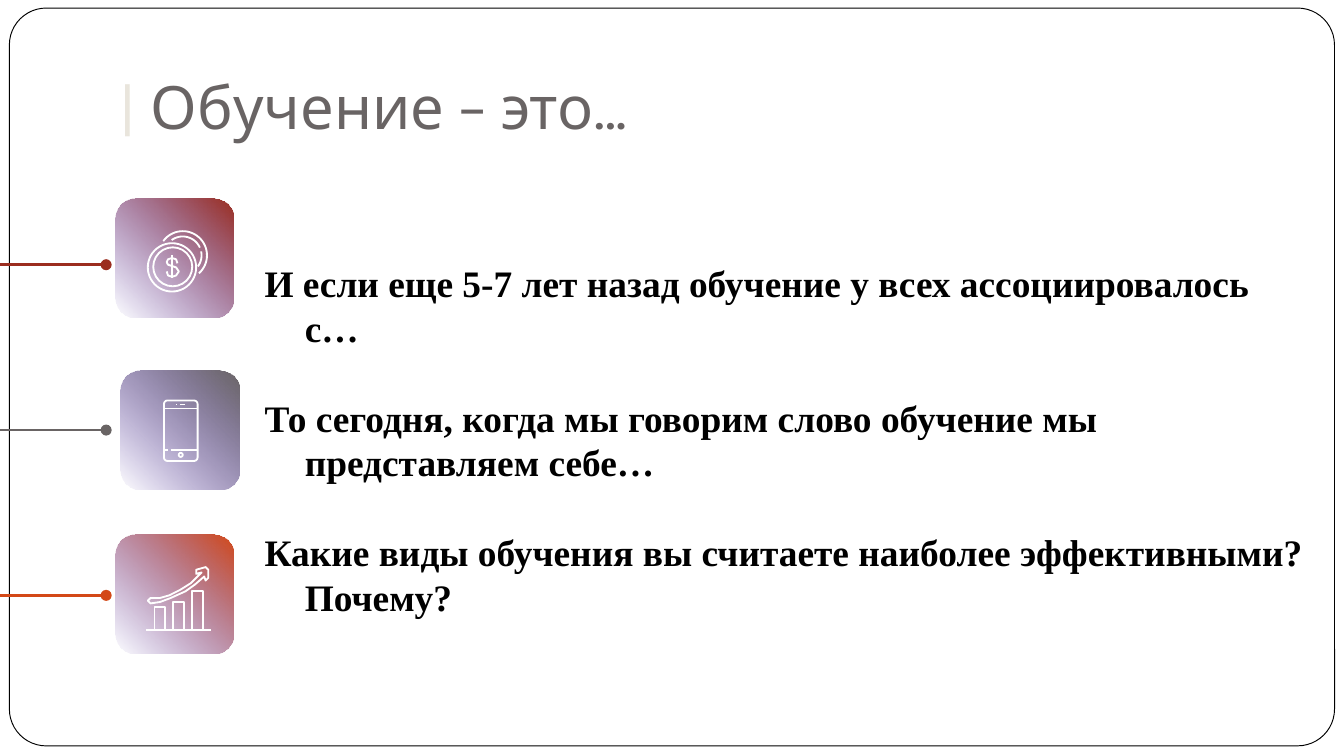
from dataclasses import dataclass
from math import cos, radians, sin

from pptx import Presentation
from pptx.dml.color import RGBColor
from pptx.enum.shapes import MSO_CONNECTOR, MSO_SHAPE
from pptx.enum.text import MSO_ANCHOR, MSO_AUTO_SIZE, PP_ALIGN
from pptx.oxml.ns import qn
from pptx.oxml.xmlchemy import OxmlElement
from pptx.util import Inches, Pt

STRAIGHT = MSO_CONNECTOR.STRAIGHT
ROUNDED, OVAL = MSO_SHAPE.ROUNDED_RECTANGLE, MSO_SHAPE.OVAL
TOP, MIDDLE = MSO_ANCHOR.TOP, MSO_ANCHOR.MIDDLE
LEFT = PP_ALIGN.LEFT
NO_AUTO_SIZE = MSO_AUTO_SIZE.NONE


@dataclass(frozen=True)
class Theme:
    title_font: str = "Karla"
    body_font: str = "Times New Roman"
    title_size: Pt = Pt(32)
    body_size: Pt = Pt(20)
    line_spacing: Pt = Pt(24)
    black: RGBColor = RGBColor.from_string("000000")
    white: RGBColor = RGBColor.from_string("FFFFFF")
    beige: RGBColor = RGBColor.from_string("E9E5DC")
    gray: RGBColor = RGBColor.from_string("696464")
    red: RGBColor = RGBColor.from_string("9B2D1F")
    orange: RGBColor = RGBColor.from_string("D34817")
    violet: RGBColor = RGBColor.from_string("270190")


THEME = Theme()
SLIDE_WIDTH = Inches(10)
SLIDE_HEIGHT = SLIDE_WIDTH * 9 // 16
TITLE = [("| ", THEME.beige), ("Обучение – это…", THEME.gray)]
STATEMENTS = [
    "И если еще 5-7 лет назад обучение у всех ассоциировалось с…",
    "То сегодня, когда мы говорим слово обучение мы представляем себе…",
    "Какие виды обучения вы считаете наиболее эффективными? Почему?",
]
TILES = [(0.86, 1.48, THEME.red), (0.9, 2.76, THEME.gray), (0.86, 3.98, THEME.orange)]
TILE_SIZE = 0.88
MARKER_TOP, MARKER_STEP = 1.97, 1.23
DOLLAR = [
    (1.32, 1.96), (1.31, 1.93), (1.28, 1.92), (1.25, 1.93), (1.24, 1.95), (1.25, 1.97),
    (1.28, 1.98), (1.31, 1.99), (1.33, 2.02), (1.31, 2.05), (1.28, 2.06), (1.25, 2.05),
    (1.24, 2.02),
]
GROWTH_ARROW = [
    (1.12, 4.45), (1.19, 4.45), (1.26, 4.43), (1.34, 4.39), (1.42, 4.34), (1.5, 4.26),
    (1.46, 4.27), (1.46, 4.24), (1.53, 4.22), (1.55, 4.24), (1.55, 4.3), (1.53, 4.32),
    (1.52, 4.29), (1.45, 4.35), (1.38, 4.4), (1.27, 4.45), (1.19, 4.48), (1.12, 4.49),
    (1.1, 4.47),
]


def set_formats(target, formats):
    for name, value in formats.items():
        setattr(target, name, value)


def style_outline(shape, color, width):
    shape.shadow.inherit = False
    shape.fill.background()
    shape.line.color.rgb = color
    shape.line.width = Pt(width)


def add_outline(shapes, kind, box, color=THEME.white, width=1, corner=None):
    shape = shapes.add_shape(kind, *map(Inches, box))
    style_outline(shape, color, width)
    if corner is not None:
        shape.adjustments[0] = corner


def add_path(shapes, points, close=False):
    start, *rest = [(Inches(x), Inches(y)) for x, y in points]
    builder = shapes.build_freeform(*start)
    builder.add_line_segments(rest, close=close)
    style_outline(builder.convert_to_shape(), THEME.white, 1)


def add_line(shapes, start, end, color, width):
    connector = shapes.add_connector(STRAIGHT, *map(Inches, (*start, *end)))
    connector.line.color.rgb = color
    connector.line.width = Pt(width)
    connector.element.spPr.append(OxmlElement("a:effectLst"))
    return connector


def add_marker(shapes, y, color):
    connector = add_line(shapes, (-0.8, y), (0.79, y), color, 1.5)
    line = connector.element.spPr.find(qn("a:ln"))
    for end in ("a:headEnd", "a:tailEnd"):
        ending = OxmlElement(end)
        ending.set("type", "oval")
        line.append(ending)


def add_tile(shapes, x, y, color):
    tile = shapes.add_shape(ROUNDED, *map(Inches, (x, y, TILE_SIZE, TILE_SIZE)))
    tile.shadow.inherit = False
    tile.line.fill.background()
    tile.fill.gradient()
    tile.fill.gradient_angle = 225
    stops = tile.fill.gradient_stops
    for stop, position, stop_color in zip(stops, (0, 1), (color, THEME.violet)):
        stop.position = position
        stop.color.rgb = stop_color
    alpha = OxmlElement("a:alpha")
    alpha.set("val", "0")
    list(tile.element.spPr.iter(qn("a:srgbClr")))[-1].append(alpha)


def arc_points(center, radius, first, last):
    angles = [radians(angle) for angle in range(first, last + 1, 6)]
    return [(center[0] + radius * cos(a), center[1] + radius * sin(a)) for a in angles]


def add_coins(slide):
    shapes = slide.shapes.add_group_shape().shapes
    add_outline(shapes, OVAL, (1.1, 1.81, 0.36, 0.36))
    add_outline(shapes, OVAL, (1.14, 1.84, 0.29, 0.29))
    for radius, first, last in ((0.18, 216, 408), (0.14, 234, 336), (0.14, 348, 396)):
        add_path(shapes, arc_points((1.36, 1.9), radius, first, last))
    add_path(shapes, DOLLAR)
    add_line(shapes, (1.28, 1.9), (1.28, 2.07), THEME.white, 1)


def add_phone(slide):
    shapes = slide.shapes.add_group_shape().shapes
    add_outline(shapes, ROUNDED, (1.22, 2.98, 0.25, 0.45), corner=0.1)
    add_outline(shapes, OVAL, (1.33, 3.37, 0.03, 0.03))
    for left, right, y in (
        (1.22, 1.47, 3.04), (1.27, 1.47, 3.35), (1.22, 1.25, 3.35),
        (1.34, 1.38, 3.01), (1.31, 1.32, 3.01),
    ):
        add_line(shapes, (left, y), (right, y), THEME.white, 1)


def add_growth_chart(slide):
    shapes = slide.shapes.add_group_shape().shapes
    base = 4.69
    add_line(shapes, (1.09, base), (1.57, base), THEME.white, 1)
    for index, top in enumerate((4.52, 4.48, 4.4)):
        left = 1.15 + 0.14 * index
        right = left + 0.08
        add_path(shapes, [(left, base), (left, top), (right, top), (right, base)])
    add_path(shapes, GROWTH_ARROW, close=True)


def format_frame(frame, anchor):
    inset = Inches(0.1)
    set_formats(frame, {
        "word_wrap": True, "auto_size": NO_AUTO_SIZE, "vertical_anchor": anchor,
        "margin_left": inset, "margin_right": inset,
        "margin_top": inset, "margin_bottom": inset,
    })


def add_run(paragraph, text, color, formats):
    run = paragraph.add_run()
    run.text = text
    run.font.color.rgb = color
    set_formats(run.font, formats)


def add_title(slide):
    title = slide.shapes.title
    set_formats(title, {
        "left": Inches(0.79), "top": Inches(0.42),
        "width": Inches(8.04), "height": Inches(0.65),
    })
    format_frame(title.text_frame, TOP)
    paragraph = title.text_frame.paragraphs[0]
    paragraph.alignment = LEFT
    for text, color in TITLE:
        add_run(paragraph, text, color, {"name": THEME.title_font, "size": THEME.title_size})


def add_statements(slide):
    box = slide.shapes.add_textbox(*map(Inches, (1.87, 1.33, 7.97, 3.88)))
    frame = box.text_frame
    format_frame(frame, MIDDLE)
    for index, text in enumerate(STATEMENTS):
        paragraph = frame.add_paragraph() if index else frame.paragraphs[0]
        set_formats(paragraph, {
            "alignment": LEFT, "line_spacing": THEME.line_spacing,
            "space_before": THEME.line_spacing if index else Pt(0),
        })
        properties = paragraph._p.get_or_add_pPr()
        properties.set("marL", str(Inches(0.3)))
        properties.set("indent", str(Inches(-0.3)))
        add_run(paragraph, text, THEME.black, {
            "name": THEME.body_font, "size": THEME.body_size, "bold": True,
        })


def main():
    presentation = Presentation()
    set_formats(presentation, {"slide_width": SLIDE_WIDTH, "slide_height": SLIDE_HEIGHT})
    slide = presentation.slides.add_slide(presentation.slide_layouts[5])
    add_outline(slide.shapes, ROUNDED, (0.07, 0.06, 9.86, 5.49), THEME.black, 0.5, 0.05)
    add_title(slide)
    add_statements(slide)
    for index, (x, y, color) in enumerate(TILES):
        add_tile(slide.shapes, x, y, color)
        add_marker(slide.shapes, MARKER_TOP + MARKER_STEP * index, color)
    add_coins(slide)
    add_phone(slide)
    add_growth_chart(slide)
    presentation.save("out.pptx")


if __name__ == "__main__":
    main()
